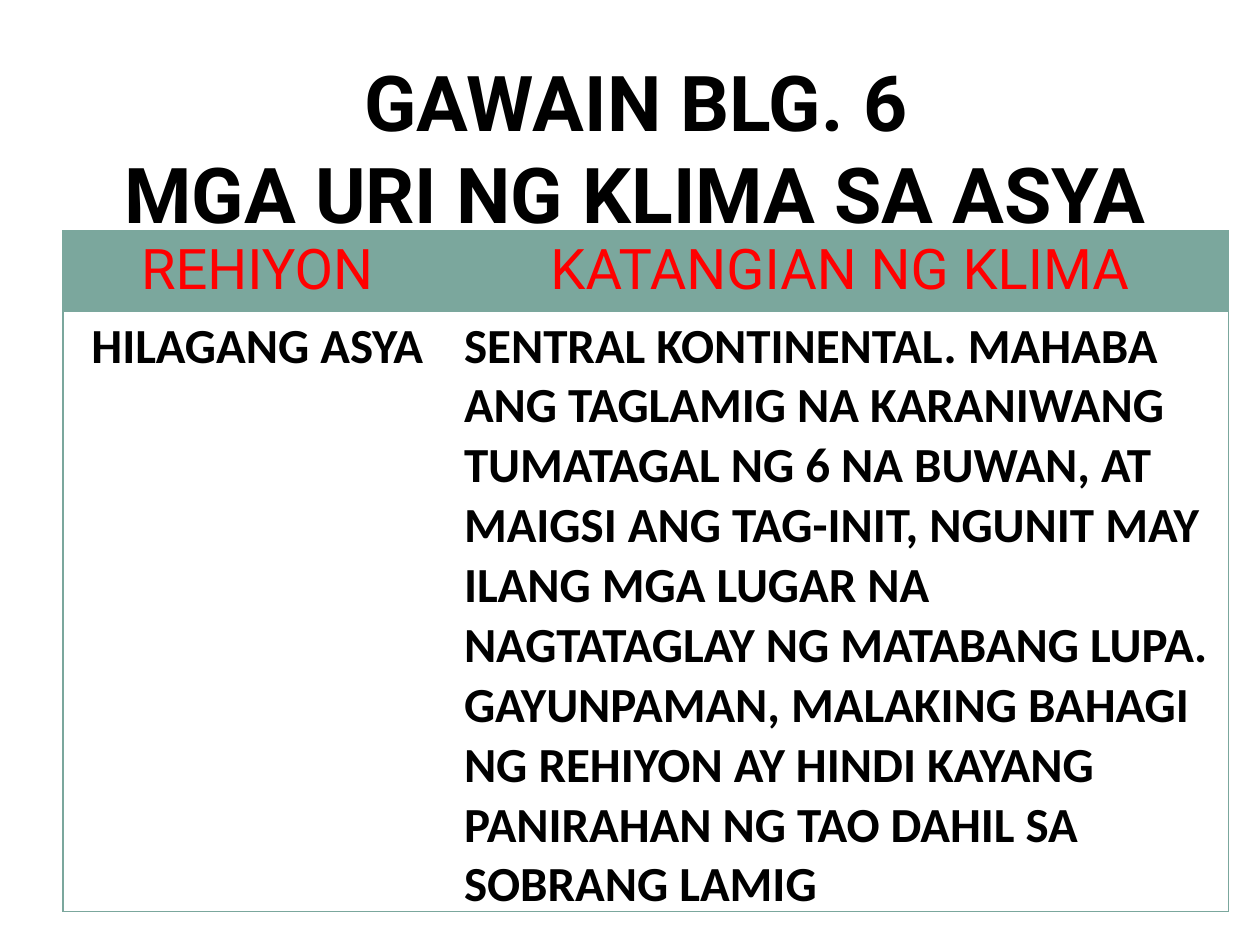
from dataclasses import dataclass

from lxml.etree import SubElement
from pptx import Presentation
from pptx.dml.color import RGBColor
from pptx.enum.text import MSO_ANCHOR, PP_ALIGN as Align
from pptx.oxml.ns import qn
from pptx.slide import Slide
from pptx.util import Cm, Pt

TITLE = ["GAWAIN BLG. 6", "MGA URI NG KLIMA SA ASYA"]
ROWS = [
    ["REHIYON", "KATANGIAN NG KLIMA"],
    ["HILAGANG ASYA",
     "SENTRAL KONTINENTAL. MAHABA ANG TAGLAMIG NA KARANIWANG TUMATAGAL NG 6 NA "
     "BUWAN, AT MAIGSI ANG TAG-INIT, NGUNIT MAY ILANG MGA LUGAR NA NAGTATAGLAY NG "
     "MATABANG LUPA. GAYUNPAMAN, MALAKING BAHAGI NG REHIYON AY HINDI KAYANG "
     "PANIRAHAN NG TAO DAHIL SA SOBRANG LAMIG"],
]


def color(hex_string):
    return RGBColor.from_string(hex_string)


@dataclass
class SlideBuilder:
    slide: Slide
    heading_font: str = "Roboto"
    body_font: str = "Calibri"
    text_color: str = "000000"
    header_color: str = "FF0000"
    accent: str = "7BA79D"

    def format_text(self, text_frame, font, size, hex_string, bold, alignment):
        for paragraph in text_frame.paragraphs:
            paragraph.alignment = alignment
            for run in paragraph.runs:
                run.font.name = font
                run.font.size = Pt(size)
                run.font.bold = bold
                run.font.color.rgb = color(hex_string)

    def add_title(self, lines, left, top, width, height):
        shape = self.slide.shapes.add_textbox(left, top, width, height)
        text_frame = shape.text_frame
        text_frame.word_wrap = True
        text_frame.margin_top = Cm(0.25)
        text_frame.text = "\n".join(lines)
        self.format_text(text_frame, self.heading_font, 44, self.text_color,
                         True, Align.CENTER)

    def set_borders(self, cell, visible_sides):
        """Draw the named sides (L, R, T, B) and hide the others."""
        properties = cell._tc.get_or_add_tcPr()
        for index, side in enumerate("LRTB"):
            line = properties.makeelement(qn(f"a:ln{side}"), {"w": str(Pt(0.79))})
            if side in visible_sides:
                fill = SubElement(line, qn("a:solidFill"))
                SubElement(fill, qn("a:srgbClr"), val=self.accent)
            else:
                SubElement(line, qn("a:noFill"))
            properties.insert(index, line)

    def add_table(self, rows, left, top, column_widths, row_heights):
        frame = self.slide.shapes.add_table(
            len(rows), len(column_widths), left, top,
            sum(column_widths), sum(row_heights))
        table = frame.table
        table.horz_banding = False
        for column, width in zip(table.columns, column_widths):
            column.width = width
        for row, height in zip(table.rows, row_heights):
            row.height = height
        for row_index, texts in enumerate(rows):
            for column_index, text in enumerate(texts):
                self.fill_cell(table.cell(row_index, column_index), text,
                               row_index == 0, column_index == 0)

    def fill_cell(self, cell, text, is_header, is_first):
        cell.text = text
        cell.vertical_anchor = MSO_ANCHOR.TOP
        if is_header:
            cell.fill.solid()
            cell.fill.fore_color.rgb = color(self.accent)
            self.format_text(cell.text_frame, self.heading_font, 32,
                             self.header_color, False, Align.CENTER)
        else:
            cell.fill.background()
            cell.margin_top, cell.margin_bottom = Cm(0.1), Cm(0)
            self.format_text(cell.text_frame, self.body_font, 28, self.text_color,
                             True, Align.CENTER if is_first else Align.LEFT)
        self.set_borders(cell, ("L" if is_first else "R") + ("T" if is_header else "TB"))


def main():
    presentation = Presentation()
    presentation.slide_width, presentation.slide_height = Cm(25.4), Cm(19.05)
    builder = SlideBuilder(presentation.slides.add_slide(presentation.slide_layouts[6]))
    builder.add_title(TITLE, Cm(1.07), Cm(0.84), Cm(23.5), Cm(19.08))
    builder.add_table(ROWS, Cm(1.27), Cm(4.65),
                      [Cm(7.83), Cm(15.67)], [Cm(1.63), Cm(12.09)])
    presentation.save("out.pptx")


if __name__ == "__main__":
    main()
